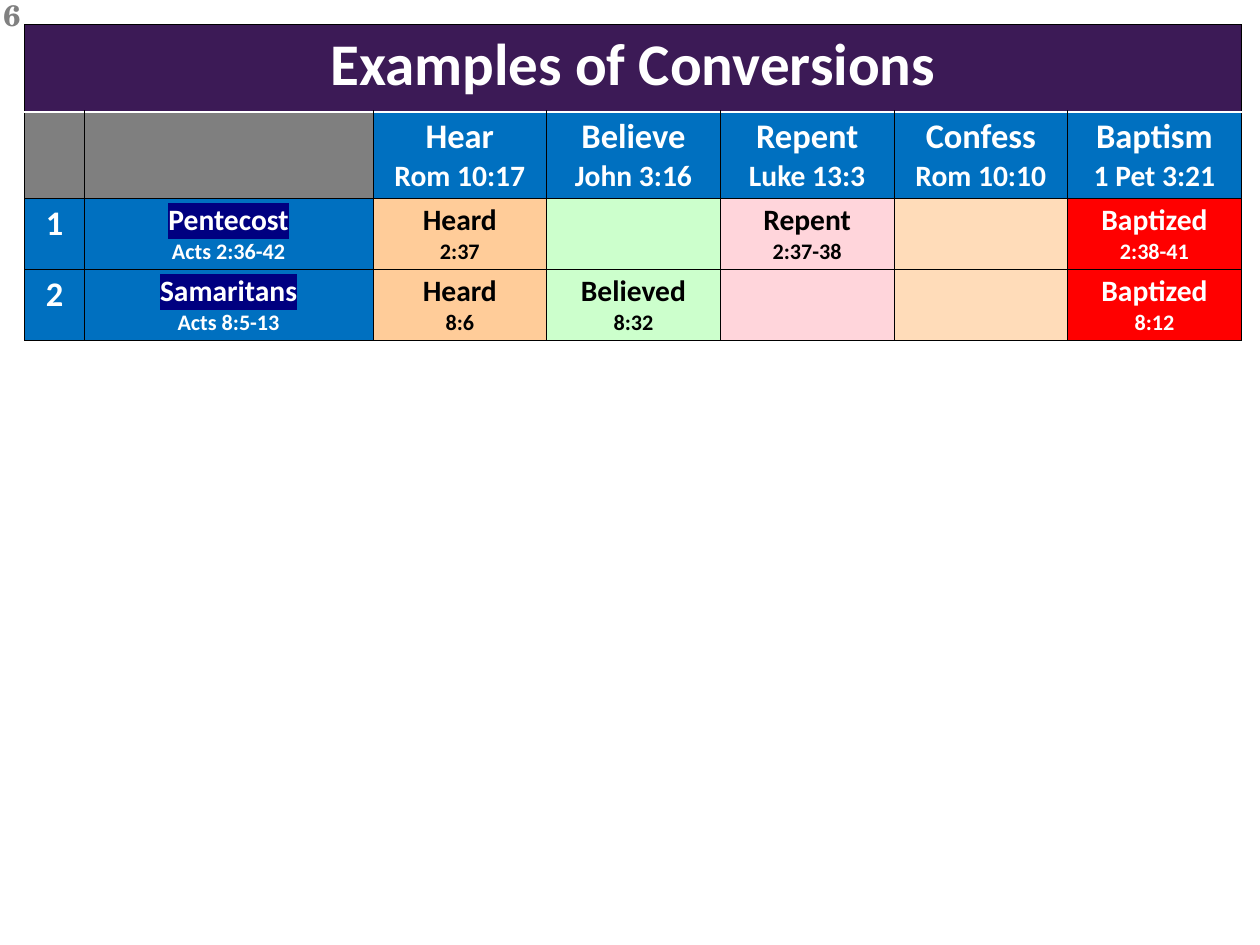
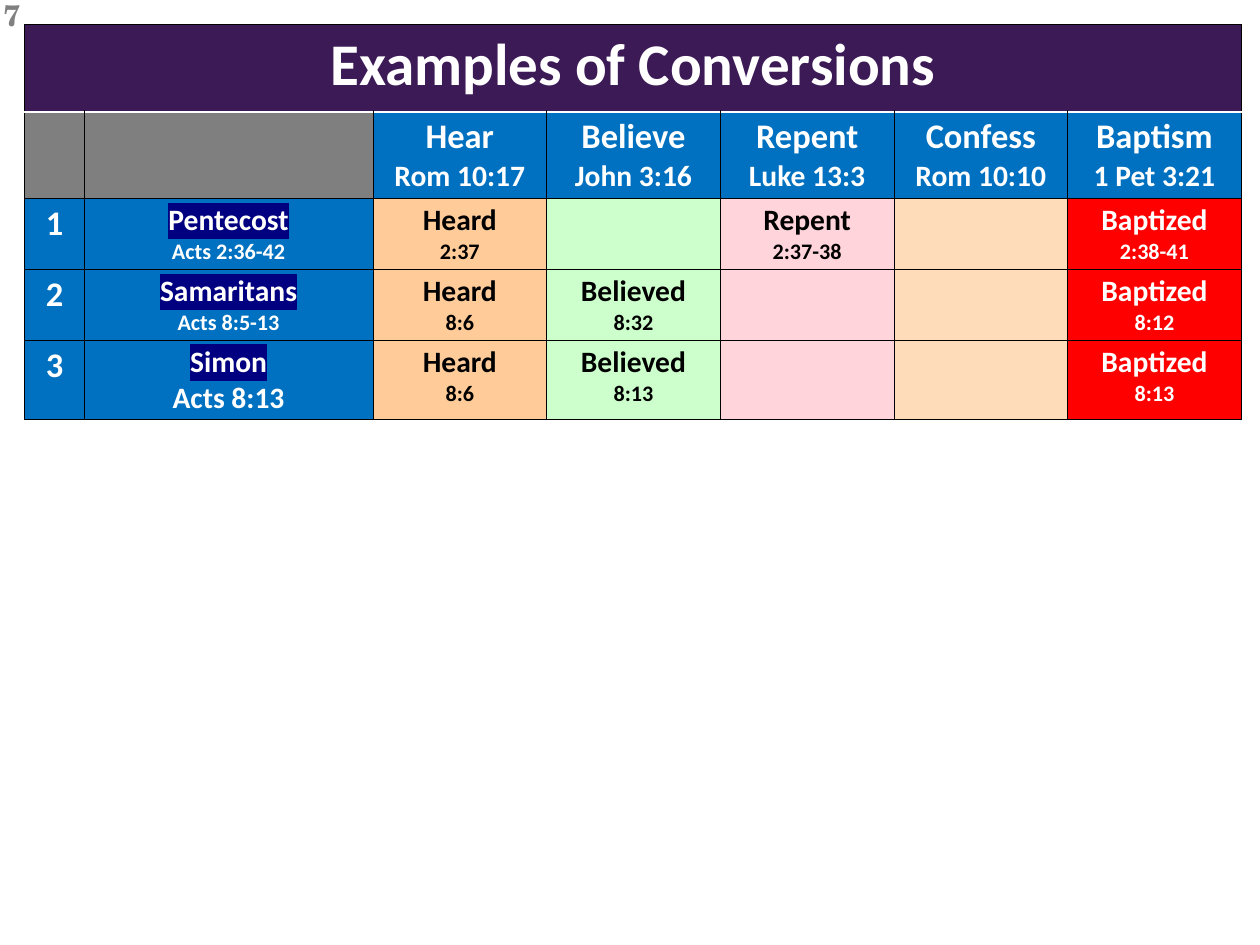
"""Builds two slides that tabulate examples of conversions."""
from lxml import etree
from pptx import Presentation
from pptx.dml.color import RGBColor
from pptx.enum.text import PP_ALIGN
from pptx.oxml.ns import qn
from pptx.util import Inches, Pt

CENTER = PP_ALIGN.CENTER
LEFT = PP_ALIGN.LEFT
BLANK_LAYOUT = 6

COLORS = {
    "white": "FFFFFF",
    "black": "000000",
    "number": "808080",
    "title": "3C1A56",
    "corner": "7F7F7F",
    "label": "0070C0",
    "highlight": "000080",
    "hear": "FFCC99",
    "believe": "CCFFCC",
    "repent": "FFD5DB",
    "confess": "FFDCB9",
    "baptism": "FF0000",
}
STEPS = ["hear", "believe", "repent", "confess", "baptism"]
COLUMN_WIDTHS = [0.67, 3.26] + [1.96] * len(STEPS)
HEADER_HEIGHT = 0.98
EXAMPLE_HEIGHT = 0.78

TITLE = "Examples of Conversions"
HEADINGS = [
    ("Hear", "Rom 10:17"),
    ("Believe", "John 3:16"),
    ("Repent", "Luke 13:3"),
    ("Confess", "Rom 10:10"),
    ("Baptism", "1 Pet 3:21"),
]
EXAMPLES = [
    ("Pentecost", "Acts 2:36-42", 18, {
        "hear": ("Heard", "2:37"),
        "repent": ("Repent", "2:37-38"),
        "baptism": ("Baptized", "2:38-41"),
    }),
    ("Samaritans", "Acts 8:5-13", 18, {
        "hear": ("Heard", "8:6"),
        "believe": ("Believed", "8:32"),
        "baptism": ("Baptized", "8:12"),
    }),
    ("Simon", "Acts 8:13", 24, {
        "hear": ("Heard", "8:6"),
        "believe": ("Believed", "8:13"),
        "baptism": ("Baptized", "8:13"),
    }),
]


class Deck:
    """Holds the shared style and the current slide."""

    def __init__(self):
        self.presentation = Presentation()
        self.presentation.slide_width = Inches(14.22)
        self.presentation.slide_height = Inches(10.67)
        self.slide = None

    def add_slide(self, number):
        layout = self.presentation.slide_layouts[BLANK_LAYOUT]
        self.slide = self.presentation.slides.add_slide(layout)
        box = self.slide.shapes.add_textbox(
            Inches(-0.06), Inches(-0.08), Inches(1.34), Inches(0.33))
        box.text_frame.word_wrap = True
        self.set_lines(box.text_frame, [(str(number), 24)], "number",
                       "TeX Gyre Schola", LEFT)

    def set_lines(self, frame, lines, color, font="Calibri", alignment=CENTER):
        for index, (text, size) in enumerate(lines):
            paragraph = frame.add_paragraph() if index else frame.paragraphs[0]
            paragraph.text = text
            paragraph.alignment = alignment
            paragraph.font.name = font
            paragraph.font.size = Pt(size)
            paragraph.font.bold = True
            paragraph.font.color.rgb = RGBColor.from_string(COLORS[color])

    def highlight(self, paragraph):
        properties = paragraph.runs[0].font._element
        mark = etree.SubElement(properties, qn("a:highlight"))
        etree.SubElement(mark, qn("a:srgbClr"), val=COLORS["highlight"])

    def border(self, cell, side, color="black", width=0.75):
        line = etree.SubElement(cell._tc.get_or_add_tcPr(), qn(f"a:ln{side}"),
                                w=str(Pt(width)))
        fill = etree.SubElement(line, qn("a:solidFill"))
        etree.SubElement(fill, qn("a:srgbClr"), val=COLORS[color])

    def fill_cell(self, cell, fill, lines=(), color="white"):
        cell.fill.solid()
        cell.fill.fore_color.rgb = RGBColor.from_string(COLORS[fill])
        self.set_lines(cell.text_frame, lines, color)

    def add_table(self, examples):
        heights = [HEADER_HEIGHT] * 2 + [EXAMPLE_HEIGHT] * len(examples)
        table = self.slide.shapes.add_table(
            len(heights), len(COLUMN_WIDTHS), Inches(0.28), Inches(0.28),
            Inches(sum(COLUMN_WIDTHS)), Inches(sum(heights))).table
        table.first_row = False
        table.horz_banding = False
        for column, width in zip(table.columns, COLUMN_WIDTHS):
            column.width = Inches(width)
        for index, (row, height) in enumerate(zip(table.rows, heights)):
            row.height = Inches(height)
            for cell in row.cells:
                for side in "LRTB":
                    if (index, side) in [(0, "B"), (1, "T")]:
                        self.border(cell, side, "white", 2)
                    else:
                        self.border(cell, side)

        table.cell(0, 0).merge(table.cell(0, len(COLUMN_WIDTHS) - 1))
        self.fill_cell(table.cell(0, 0), "title", [(TITLE, 48)])
        for column in range(2):
            self.fill_cell(table.cell(1, column), "corner")
        for column, (step, verse) in enumerate(HEADINGS, 2):
            self.fill_cell(table.cell(1, column), "label",
                           [(step, 28), (verse, 24)])
        for number, example in enumerate(examples, 1):
            self.add_example(table, number, *example)

    def add_example(self, table, number, name, passage, passage_size, verses):
        row = number + 1
        self.fill_cell(table.cell(row, 0), "label", [(str(number), 28)])
        name_cell = table.cell(row, 1)
        self.fill_cell(name_cell, "label", [(name, 24), (passage, passage_size)])
        self.highlight(name_cell.text_frame.paragraphs[0])
        for column, step in enumerate(STEPS, 2):
            lines = list(zip(verses.get(step, ()), (24, 18)))
            color = "white" if step == "baptism" else "black"
            self.fill_cell(table.cell(row, column), step, lines, color)


def main():
    deck = Deck()
    for slide_number, example_count in [(6, 2), (7, 3)]:
        deck.add_slide(slide_number)
        deck.add_table(EXAMPLES[:example_count])
    deck.presentation.save("out.pptx")


if __name__ == "__main__":
    main()
